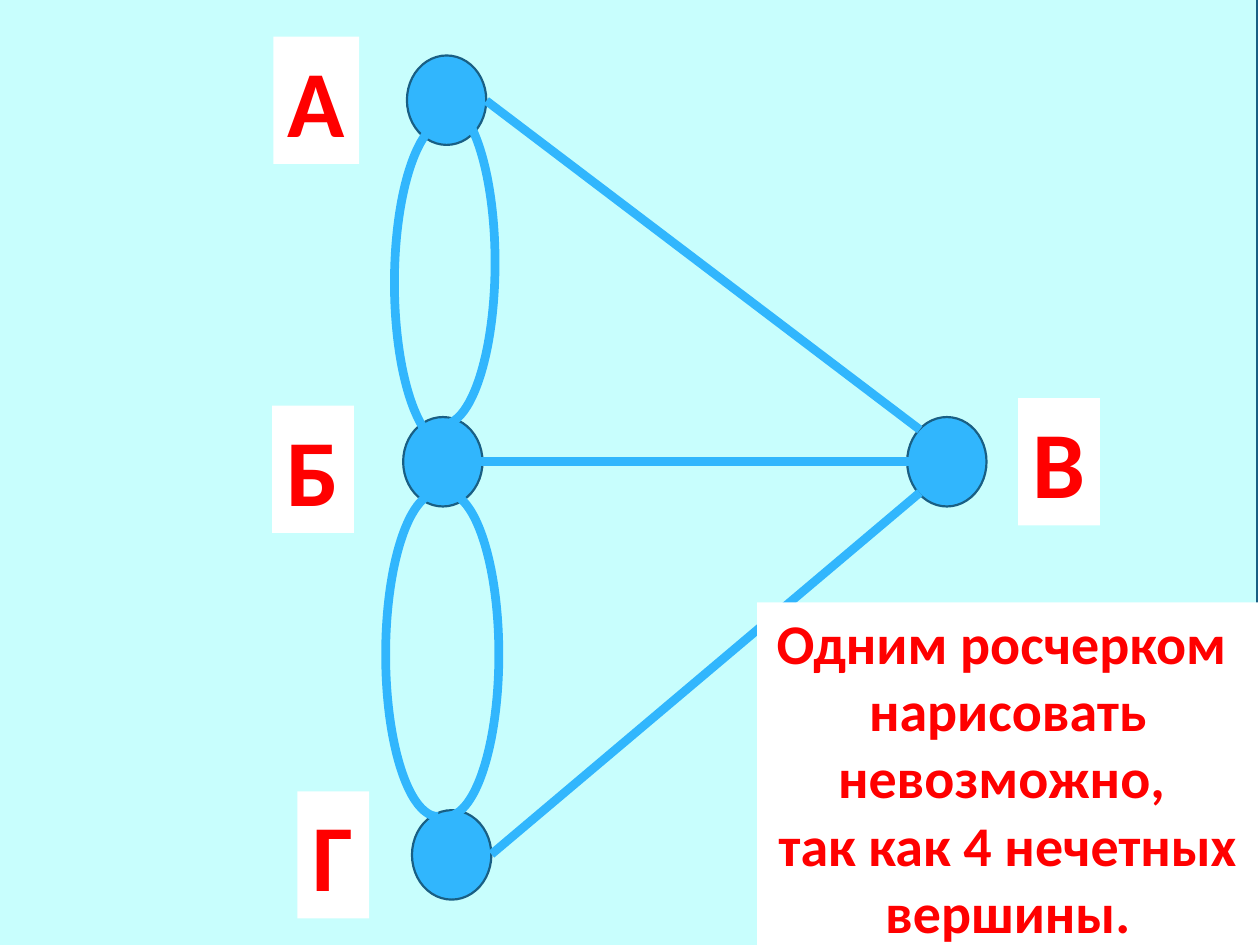
import pptx
import pptx.util
from pptx.dml.color import RGBColor
from pptx.enum.shapes import MSO_CONNECTOR, MSO_SHAPE
from pptx.enum.text import MSO_ANCHOR, MSO_AUTO_SIZE, PP_ALIGN
from pptx.oxml.ns import qn
from pptx.util import Inches, Pt
import lxml.etree

AQUA = RGBColor(0xC8, 0xFE, 0xFD)
BLUE = RGBColor(0x31, 0xB6, 0xFD)
NAVY = RGBColor(0x19, 0x5F, 0x84)
RED = RGBColor(0xFF, 0x00, 0x00)
WHITE = RGBColor(0xFF, 0xFF, 0xFF)

# Content: graph vertices, edges, labels and the conclusion
VERTEX_SIZE = (0.63, 0.71)
VERTICES = [(3.23, 0.44), (7.2, 3.31), (3.27, 6.43), (3.2, 3.31)]  # А, В, Г, Б
ARC_SIZE = (0.83, 2.57)
ARC_END = 53.087  # half an ellipse, starting at the top
CURVED_EDGES = [(3.1, 0.8, 0), (3.13, 0.96, 180),
                (3.06, 3.91, 180), (3.13, 3.91, 0)]  # left, top, rotation
STRAIGHT_EDGES = [((3.48, 3.66), (7.33, 3.66)),
                  ((3.86, 0.8), (7.3, 3.41)),
                  ((7.3, 3.91), (3.9, 6.78))]
LABELS = [("А", (2.17, 0.29, 0.68, 1.01)), ("Г", (2.36, 6.28, 0.57, 1.01)),
          ("Б", (2.16, 3.22, 0.65, 1.01)), ("В", (8.08, 3.16, 0.65, 1.01))]
CONCLUSION = ["Одним росчерком ", "нарисовать невозможно, ",
              "так как 4 нечетных вершины."]


def add_figure(slide, preset, box, fill=None, line=None, width=1.25):
    figure = slide.shapes.add_shape(preset, *map(Inches, box))
    figure.shadow.inherit = False
    if fill is None:
        figure.fill.background()
    else:
        figure.fill.solid()
        figure.fill.fore_color.rgb = fill
    if line is None:
        figure.line.fill.background()
    else:
        figure.line.color.rgb = line
        figure.line.width = Pt(width)
    return figure


def add_text(slide, lines, box, size=32, wrap=True, color=RED, font="Calibri"):
    panel = slide.shapes.add_textbox(*map(Inches, box))
    panel.fill.solid()
    panel.fill.fore_color.rgb = WHITE
    frame = panel.text_frame
    frame.word_wrap = wrap
    frame.auto_size = MSO_AUTO_SIZE.SHAPE_TO_FIT_TEXT
    frame.vertical_anchor = MSO_ANCHOR.TOP
    for number, line in enumerate(lines):
        paragraph = frame.add_paragraph() if number else frame.paragraphs[0]
        paragraph.alignment = PP_ALIGN.CENTER
        run = paragraph.add_run()
        run.text = line
        run.font.name = font
        run.font.size = Pt(size)
        run.font.bold = True
        run.font.color.rgb = color


def add_straight_edge(slide, start, end):
    edge = slide.shapes.add_connector(
        MSO_CONNECTOR.STRAIGHT, *map(Inches, start + end))
    edge.line.color.rgb = BLUE
    edge.line.width = Pt(5)
    lxml.etree.SubElement(edge._element.spPr, qn("a:effectLst"))


def main():
    deck = pptx.Presentation()
    deck.slide_width, deck.slide_height = Inches(10), Inches(7.5)
    slide = deck.slides.add_slide(deck.slide_layouts[6])

    # Backdrop
    add_figure(slide, MSO_SHAPE.RECTANGLE, (-0.02, -0.03, 10, 7.64), AQUA, NAVY)

    # Graph
    for corner in VERTICES:
        add_figure(slide, MSO_SHAPE.OVAL, corner + VERTEX_SIZE, BLUE, NAVY)
    for left, top, rotation in CURVED_EDGES:
        arc = add_figure(slide, MSO_SHAPE.ARC, (left, top) + ARC_SIZE,
                         line=BLUE, width=5)
        arc.adjustments[1] = ARC_END
        arc.rotation = rotation
    for start, end in STRAIGHT_EDGES:
        add_straight_edge(slide, start, end)

    # Labels and conclusion
    for letter, box in LABELS:
        add_text(slide, [letter], box, size=54, wrap=False)
    add_text(slide, CONCLUSION, (6.01, 4.78, 3.98, 2.79))

    deck.save("out.pptx")


if __name__ == "__main__":
    main()
